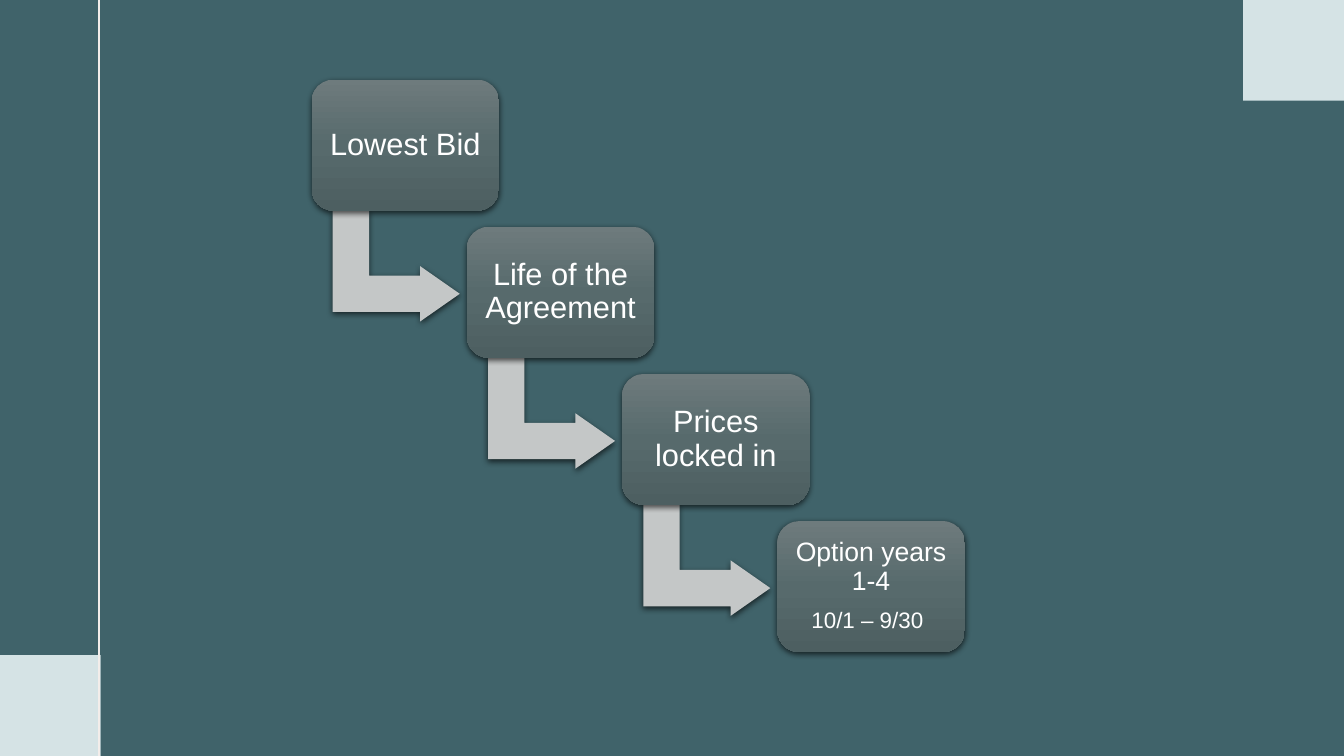
from dataclasses import dataclass

from lxml import etree
from pptx import Presentation
from pptx.dml.color import RGBColor
from pptx.enum.shapes import MSO_CONNECTOR, MSO_SHAPE
from pptx.enum.text import MSO_ANCHOR, PP_ALIGN
from pptx.oxml import parse_xml
from pptx.oxml.ns import nsdecls, qn
from pptx.shapes.autoshape import Shape
from pptx.slide import Slide
from pptx.util import Inches, Pt

RECT = MSO_SHAPE.RECTANGLE
ROUND_RECT = MSO_SHAPE.ROUNDED_RECTANGLE
BENT_ARROW = MSO_SHAPE.BENT_UP_ARROW
STRAIGHT = MSO_CONNECTOR.STRAIGHT
MIDDLE = MSO_ANCHOR.MIDDLE
CENTER = PP_ALIGN.CENTER

BACKGROUND = "40636A"
CORNER = "D5E3E5"
RULE = "F3EDEA"
ARROW = "C4C7C7"
WHITE = "FFFFFF"
GRADIENT = ((0, "6E7B7D"), (50, "576A6C"), (100, "4D5F61"))

BOX_W, BOX_H = 1.86, 1.3
FIRST_X, FIRST_Y = 3.09, 0.79
STEP_X, STEP_Y = 1.54, 1.46
ARROW_W, ARROW_H = 1.1, 1.26
ARROW_DX, ARROW_DY = 0.29, 1.22


@dataclass
class Run:
    text: str
    size: int


@dataclass
class Step:
    paragraphs: list[list[Run]]
    inset: float = 0.09


STEPS = [
    Step([[Run("Lowest Bid", 22)]]),
    Step([[Run("Life of the Agreement", 22)]]),
    Step([[Run("Prices locked in", 22)]]),
    Step([[Run("Option years 1-4", 19)], [Run("10/1 – 9/30", 16), Run(" ", 19)]], 0.08),
]


def rgb(value: str) -> RGBColor:
    return RGBColor.from_string(value)


def add_shape(s: Slide, kind: int, x: float, y: float, w: float, h: float, fill: str) -> Shape:
    sp = s.shapes.add_shape(kind, Inches(x), Inches(y), Inches(w), Inches(h))
    sp.shadow.inherit = False
    sp.fill.solid()
    sp.fill.fore_color.rgb = rgb(fill)
    sp.line.fill.background()
    return sp


def add_shadow(sp: Shape) -> None:
    effects = sp._element.spPr.find(qn("a:effectLst"))
    effects.append(parse_xml(
        f'<a:outerShdw {nsdecls("a")} blurRad="{Pt(4.5)}" dist="{Pt(1.5)}" '
        'dir="5400000" algn="ctr" rotWithShape="0"><a:srgbClr val="000000">'
        '<a:alpha val="63000"/></a:srgbClr></a:outerShdw>'))


def add_gradient(sp: Shape) -> None:
    stops = "".join(
        f'<a:gs pos="{pos * 1000}"><a:srgbClr val="{color}"/></a:gs>' for pos, color in GRADIENT)
    gradient = parse_xml(
        f'<a:gradFill {nsdecls("a")} rotWithShape="1"><a:gsLst>{stops}</a:gsLst>'
        '<a:lin ang="5400000" scaled="0"/></a:gradFill>')
    spPr = sp._element.spPr
    spPr.replace(spPr.find(qn("a:solidFill")), gradient)


def write_text(sp: Shape, paragraphs: list[list[Run]], *, inset: float,
               font: str = "Arial", color: str = WHITE) -> None:
    tf = sp.text_frame
    tf.word_wrap = True
    tf.vertical_anchor = MIDDLE
    tf.margin_left = tf.margin_right = tf.margin_top = tf.margin_bottom = Inches(inset)
    for i, runs in enumerate(paragraphs):
        p = tf.add_paragraph() if i else tf.paragraphs[0]
        p.alignment = CENTER
        p.line_spacing = 0.9
        p.space_after = Pt(0.35 * max(run.size for run in runs))
        for run in runs:
            r = p.add_run()
            r.text = run.text
            r.font.name = font
            r.font.size = Pt(run.size)
            r.font.color.rgb = rgb(color)


def add_rule(s: Slide, x: float, height: float) -> None:
    line = s.shapes.add_connector(STRAIGHT, Inches(x), 0, Inches(x), Inches(height))
    line.line.color.rgb = rgb(RULE)
    line.line.width = Pt(1.5)
    etree.SubElement(line._element.spPr, qn("a:effectLst"))


def add_arrow(s: Slide, x: float, y: float) -> None:
    sp = add_shape(s, BENT_ARROW, x, y, ARROW_W, ARROW_H, ARROW)
    sp.rotation = 90
    for i, value in enumerate((0.328, 0.25, 0.358)):
        sp.adjustments[i] = value
    add_shadow(sp)


def add_step(s: Slide, step: Step, x: float, y: float) -> None:
    sp = add_shape(s, ROUND_RECT, x, y, BOX_W, BOX_H, ARROW)
    sp.adjustments[0] = 0.167
    add_gradient(sp)
    add_shadow(sp)
    write_text(sp, step.paragraphs, inset=step.inset)


def main() -> None:
    prs = Presentation()
    prs.slide_width, prs.slide_height = Inches(13.33), Inches(7.5)
    s = prs.slides.add_slide(prs.slide_layouts[6])
    s.background.fill.solid()
    s.background.fill.fore_color.rgb = rgb(BACKGROUND)

    add_shape(s, RECT, 0, 6.5, 1, 1, CORNER)
    add_rule(s, 0.98, 7.5)
    add_shape(s, RECT, 12.33, 0, 1, 1, CORNER)

    for i, step in enumerate(STEPS):
        x, y = FIRST_X + i * STEP_X, FIRST_Y + i * STEP_Y
        if i < len(STEPS) - 1:
            add_arrow(s, x + ARROW_DX, y + ARROW_DY)
        add_step(s, step, x, y)

    prs.save("out.pptx")


if __name__ == "__main__":
    main()
